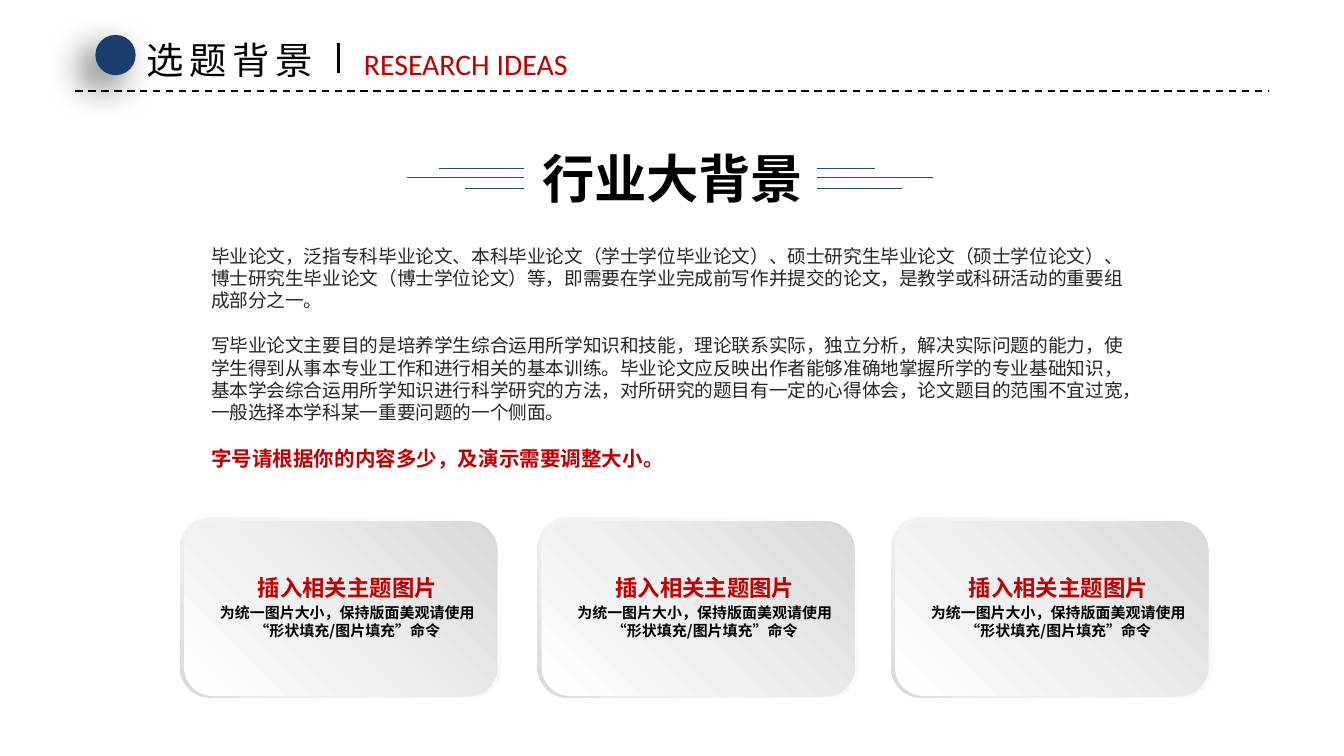
from lxml.etree import SubElement
from pptx import Presentation
from pptx.dml.color import RGBColor
from pptx.enum.dml import MSO_LINE
from pptx.enum.shapes import MSO_CONNECTOR, MSO_SHAPE
from pptx.enum.text import MSO_AUTO_SIZE, PP_ALIGN
from pptx.oxml.ns import qn
from pptx.util import Inches, Pt

COLORS = {
    "navy": "1A3F6C",
    "blue": "1F497D",
    "red": "C00000",
    "black": "000000",
    "body": "262626",
    "white": "FFFFFF",
    "pale": "F2F2F2",
    "mist": "F0F0F0",
    "grey": "D9D9D9",
}
CJK_FONT = "Noto Sans CJK SC"
LINE_RATIO = 1.2


def rgb(name):
    return RGBColor.from_string(COLORS[name])


def write(paragraph, text, size=10, color="black", bold=False, font=CJK_FONT,
          align=PP_ALIGN.LEFT, tracking=0, before=0):
    paragraph.alignment = align
    paragraph.line_spacing = Pt(size * LINE_RATIO)
    if before:
        paragraph.space_before = Pt(before)
    run = paragraph.add_run()
    run.text = text
    run.font.size = Pt(size)
    run.font.bold = bold
    run.font.color.rgb = rgb(color)
    run.font.name = font
    properties = run.font._element
    SubElement(properties, qn("a:ea"), typeface=font)
    if tracking:
        properties.set("spc", str(tracking * 100))


class SlideBuilder:
    def __init__(self, slide):
        self.slide = slide
        self.shapes = slide.shapes

    def start_group(self):
        self.shapes = self.slide.shapes.add_group_shape().shapes

    def end_group(self):
        self.shapes = self.slide.shapes

    def text(self, box, paragraphs, inset=0, wrap=True):
        frame = self.shapes.add_textbox(*map(Inches, box)).text_frame
        frame.word_wrap = wrap
        frame.auto_size = MSO_AUTO_SIZE.SHAPE_TO_FIT_TEXT
        frame.margin_left = frame.margin_right = Inches(inset)
        frame.margin_top = frame.margin_bottom = Inches(inset / 2)
        for index, (content, style) in enumerate(paragraphs):
            paragraph = frame.add_paragraph() if index else frame.paragraphs[0]
            write(paragraph, content, **style)

    def line(self, start, end, color="black", width=1, dash=None):
        rule = self.shapes.add_connector(
            MSO_CONNECTOR.STRAIGHT, *map(Inches, start + end))
        rule.line.color.rgb = rgb(color)
        rule.line.width = Pt(width)
        if dash:
            rule.line.dash_style = dash
        SubElement(rule._element.spPr, qn("a:effectLst"))

    def shape(self, kind, box):
        shape = self.shapes.add_shape(kind, *map(Inches, box))
        shape.shadow.inherit = False
        shape.line.fill.background()
        return shape

    def dot(self, box, color):
        dot = self.shape(MSO_SHAPE.OVAL, box)
        dot.fill.solid()
        dot.fill.fore_color.rgb = rgb(color)
        effects = dot._element.spPr.find(qn("a:effectLst"))
        shadow = SubElement(effects, qn("a:outerShdw"), blurRad=str(Pt(20)),
                            dist=str(Pt(10)), dir=str(135 * 60000),
                            algn="tr", rotWithShape="0")
        tint = SubElement(shadow, qn("a:srgbClr"), val=COLORS["black"])
        SubElement(tint, qn("a:alpha"), val="60000")

    def gradient_panel(self, box, stops, angle):
        panel = self.shape(MSO_SHAPE.ROUNDED_RECTANGLE, box)
        panel.fill.gradient()
        panel.fill.gradient_angle = angle
        stop_list = panel._element.spPr.find(".//" + qn("a:gsLst"))
        for stop in list(stop_list):
            stop_list.remove(stop)
        for position, color in stops:
            stop = SubElement(stop_list, qn("a:gs"), pos=str(position * 1000))
            SubElement(stop, qn("a:srgbClr"), val=COLORS[color])

    def card(self, left, top):
        self.start_group()
        self.gradient_panel((left, top, 2.39, 1.34),
                            [(0, "white"), (62, "pale"), (100, "grey")], 225)
        self.gradient_panel((left + 0.03, top + 0.03, 2.33, 1.3),
                            [(0, "white"), (42, "mist"), (100, "grey")], 45)
        bold = dict(bold=True, align=PP_ALIGN.CENTER)
        self.text((left + 0.44, top + 0.42, 1.61, 0.2),
                  [("插入相关主题图片", dict(size=12, color="red", **bold))])
        self.text((left + 0.26, top + 0.64, 1.97, 0.27),
                  [("为统一图片大小，保持版面美观请使用 “形状填充/图片填充”命令",
                    dict(size=8, **bold))])
        self.end_group()


def main():
    deck = Presentation()
    deck.slide_width = Inches(10)
    deck.slide_height = Inches(10 * 9 / 16)
    page = SlideBuilder(deck.slides.add_slide(deck.slide_layouts[6]))

    page.text((1.57, 1.82, 6.85, 1.7), [
        ("毕业论文，泛指专科毕业论文、本科毕业论文（学士学位毕业论文）、硕士研究生毕业论文（硕士学位论文）、"
         "博士研究生毕业论文（博士学位论文）等，即需要在学业完成前写作并提交的论文，是教学或科研活动的重要组"
         "成部分之一。", dict(color="body")),
        ("写毕业论文主要目的是培养学生综合运用所学知识和技能，理论联系实际，独立分析，解决实际问题的能力，使"
         "学生得到从事本专业工作和进行相关的基本训练。毕业论文应反映出作者能够准确地掌握所学的专业基础知识，"
         "基本学会综合运用所学知识进行科学研究的方法，对所研究的题目有一定的心得体会，论文题目的范围不宜过宽，"
         "一般选择本学科某一重要问题的一个侧面。", dict(color="body", before=12)),
        ("字号请根据你的内容多少，及演示需要调整大小。",
         dict(size=11, color="red", bold=True, before=12)),
    ])
    page.text((3.74, 1.09, 2.53, 0.47),
              [("行业大背景", dict(size=28, bold=True, align=PP_ALIGN.CENTER))])

    title_rules = {3.9: (3.27, 3.03, 3.46), 6.08: (6.51, 6.94, 6.71)}
    for inner, outer_ends in title_rules.items():
        page.start_group()
        for y, outer in zip((1.25, 1.32, 1.4), outer_ends):
            page.line((inner, y), (outer, y), "blue", 0.5)
        page.end_group()

    page.line((0.56, 0.68), (9.44, 0.68), dash=MSO_LINE.DASH)
    page.dot((0.71, 0.26, 0.3, 0.3), "navy")
    page.text((0.99, 0.23, 1.49, 0.44),
              [("选题背景", dict(size=20, tracking=3))], inset=0.1, wrap=False)
    page.text((2.61, 0.29, 1.91, 0.37),
              [("RESEARCH IDEAS", dict(size=16, color="red", font="Calibri"))],
              inset=0.1, wrap=False)
    page.line((2.52, 0.32), (2.52, 0.54), width=1.5)

    for left in (1.34, 4, 6.63):
        page.card(left, 3.85)

    deck.save("out.pptx")


if __name__ == "__main__":
    main()
